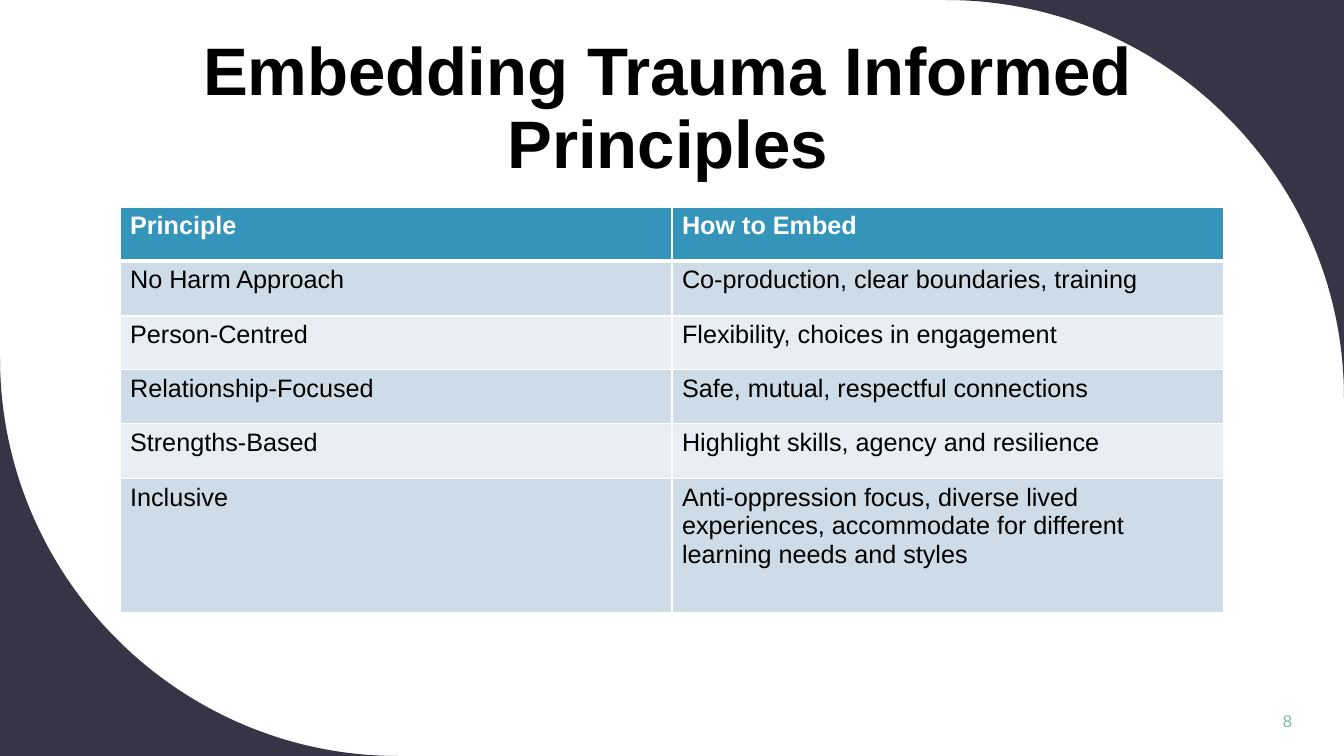
"""Build the slide on embedding trauma informed principles."""
from lxml.etree import SubElement
from pptx import Presentation
from pptx.dml.color import RGBColor
from pptx.enum.text import MSO_ANCHOR, MSO_AUTO_SIZE, PP_ALIGN
from pptx.oxml.ns import qn
from pptx.util import Emu, Pt

TITLE = "Embedding Trauma Informed Principles"
SLIDE_NUMBER = "8"
ROWS = [
    ("Principle", "How to Embed"),
    ("No Harm Approach", "Co-production, clear boundaries, training"),
    ("Person-Centred", "Flexibility, choices in engagement"),
    ("Relationship-Focused", "Safe, mutual, respectful connections"),
    ("Strengths-Based", "Highlight skills, agency and resilience"),
    ("Inclusive", "Anti-oppression focus, diverse lived experiences, "
                  "accommodate for different learning needs and styles"),
]
COLORS = {
    "corner": "373545", "header": "3494BA", "odd": "CEDCE7", "even": "E8EEF3",
    "text": "000000", "white": "FFFFFF", "number": "75BDA7",
}
FONT = "Arial"
EMU_PER_PX = 914400 / 100.8
WIDTH, HEIGHT = 1344, 756
RADIUS = 398
CURVE_RATIO = 0.55
TITLE_BOX = (129, 42, 1078, 146)
NUMBER_BOX = (1119, 701, 183, 40)
TABLE_LEFT, TABLE_TOP = 120, 207
COLUMN_WIDTH = 552
ROW_HEIGHTS = [54, 55, 54, 54, 55, 134]
CORNERS = [
    ((WIDTH, 0), (WIDTH - RADIUS, 0), (WIDTH, RADIUS)),
    ((0, HEIGHT), (RADIUS, HEIGHT), (0, HEIGHT - RADIUS)),
]


def px(length):
    return Emu(round(length * EMU_PER_PX))


def color(name):
    return RGBColor.from_string(COLORS[name])


def style_text(text_frame, size, color_name, bold=False, align=PP_ALIGN.LEFT):
    for paragraph in text_frame.paragraphs:
        paragraph.alignment = align
        for run in paragraph.runs:
            run.font.name = FONT
            run.font.size = Pt(size)
            run.font.bold = bold
            run.font.color.rgb = color(color_name)


def add_corner(slide, tip, start, end):
    builder = slide.shapes.build_freeform(*tip, scale=EMU_PER_PX)
    builder.add_line_segments([start, end], close=True)
    corner = builder.convert_to_shape()
    corner.shadow.inherit = False
    corner.fill.solid()
    corner.fill.fore_color.rgb = color("corner")
    corner.line.fill.background()

    origin = [min(values) for values in zip(tip, start, end)]
    controls = [
        [point[axis] + CURVE_RATIO * (tip[axis] - point[axis]) for axis in (0, 1)]
        for point in (start, end)
    ]
    last_line = list(corner._element.iter(qn("a:lnTo")))[1]
    last_line.tag = qn("a:cubicBezTo")
    last_line.remove(last_line[0])
    for x, y in [*controls, end]:
        SubElement(last_line, qn("a:pt"), x=str(round(x - origin[0])),
                   y=str(round(y - origin[1])))
    slide.shapes.title._element.addprevious(corner._element)


def add_title(slide):
    title = slide.shapes.title
    title.left, title.top, title.width, title.height = map(px, TITLE_BOX)
    frame = title.text_frame
    frame.text = TITLE
    frame.word_wrap = True
    frame.auto_size = MSO_AUTO_SIZE.NONE
    frame.vertical_anchor = MSO_ANCHOR.BOTTOM
    frame.paragraphs[0].line_spacing = 0.9
    style_text(frame, 48, "text", True, PP_ALIGN.CENTER)


def add_slide_number(slide):
    frame = slide.shapes.add_textbox(*map(px, NUMBER_BOX)).text_frame
    frame.word_wrap = True
    frame.vertical_anchor = MSO_ANCHOR.MIDDLE
    frame.text = SLIDE_NUMBER
    style_text(frame, 12, "number", align=PP_ALIGN.RIGHT)


def add_border(cell, side, width):
    properties = cell._tc.get_or_add_tcPr()
    border = SubElement(properties, qn(f"a:{side}"), w=str(Pt(width)))
    fill = SubElement(border, qn("a:solidFill"))
    SubElement(fill, qn("a:srgbClr"), val=COLORS["white"])


def add_principles_table(slide):
    column_count = len(ROWS[0])
    table = slide.shapes.add_table(
        len(ROWS), column_count, px(TABLE_LEFT), px(TABLE_TOP),
        px(COLUMN_WIDTH * column_count), px(sum(ROW_HEIGHTS))).table
    for column in table.columns:
        column.width = px(COLUMN_WIDTH)
    for row_index, (texts, height) in enumerate(zip(ROWS, ROW_HEIGHTS)):
        table.rows[row_index].height = px(height)
        is_header = row_index == 0
        fill_name = "header" if is_header else "odd" if row_index % 2 else "even"
        for column_index, text in enumerate(texts):
            cell = table.cell(row_index, column_index)
            for side in ("lnL", "lnR", "lnT", "lnB"):
                beside_header = (row_index, side) in [(0, "lnB"), (1, "lnT")]
                add_border(cell, side, 3 if beside_header else 1)
            cell.fill.solid()
            cell.fill.fore_color.rgb = color(fill_name)
            cell.text_frame.text = text
            style_text(cell.text_frame, 18,
                       "white" if is_header else "text", is_header)


def main():
    presentation = Presentation()
    presentation.slide_width, presentation.slide_height = px(WIDTH), px(HEIGHT)
    slide = presentation.slides.add_slide(presentation.slide_layouts[5])
    for tip, start, end in CORNERS:
        add_corner(slide, tip, start, end)
    add_title(slide)
    add_slide_number(slide)
    add_principles_table(slide)
    presentation.save("out.pptx")


if __name__ == "__main__":
    main()
